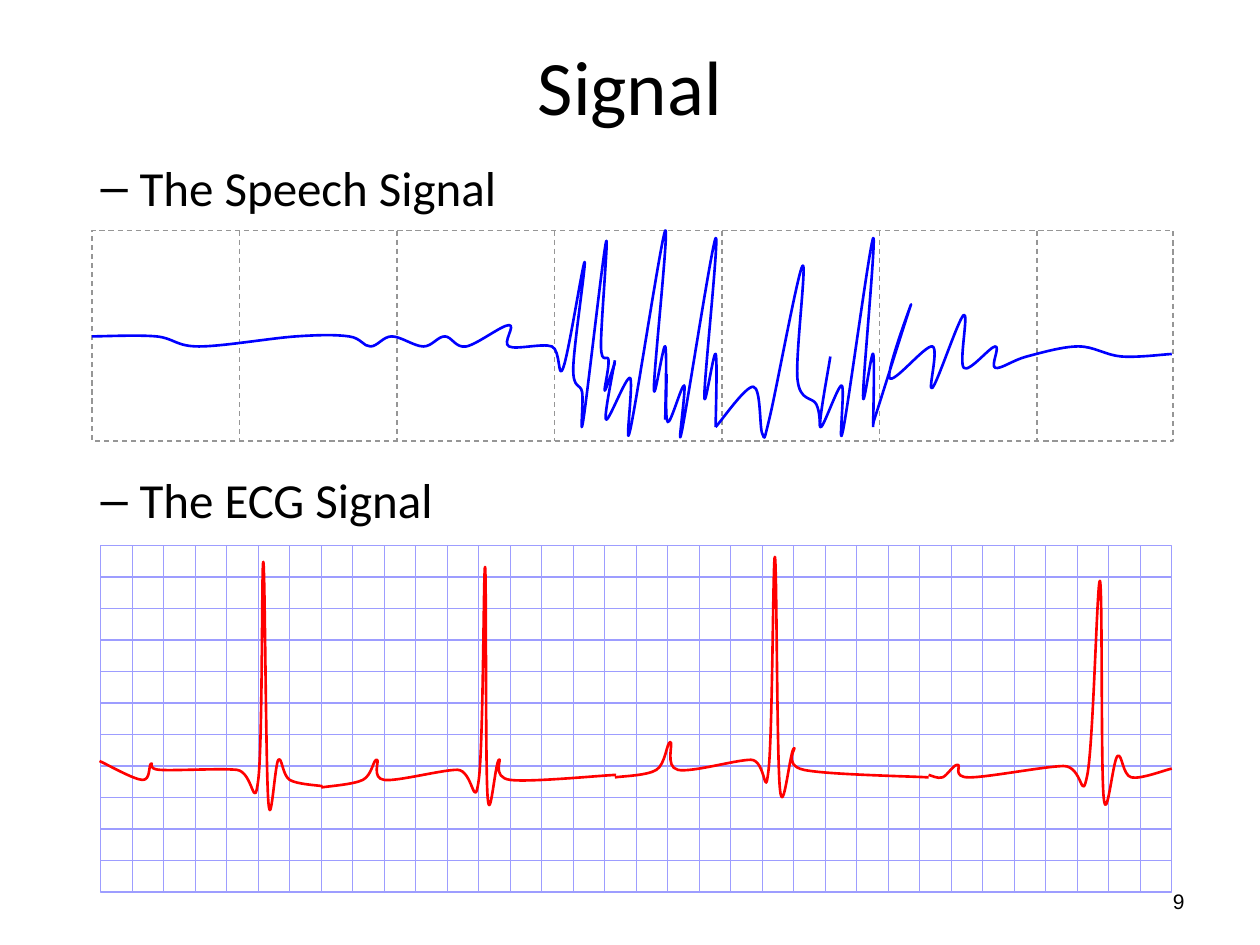
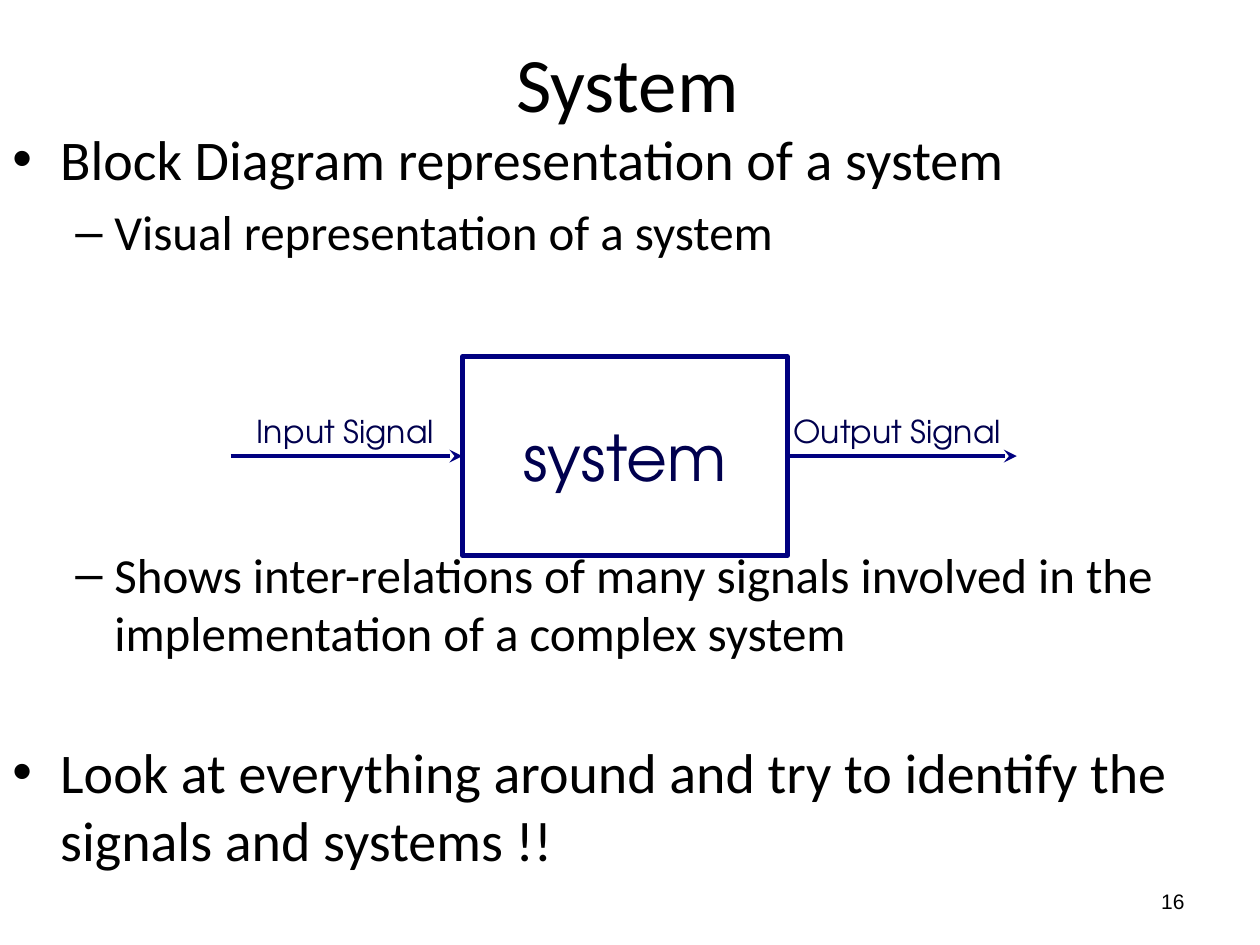
"""Build two slides introducing signals and systems."""
from dataclasses import dataclass
from itertools import chain
from typing import Optional

import pptx
import pptx.dml.color
import pptx.enum.dml
import pptx.enum.shapes
import pptx.enum.text
import pptx.oxml
import pptx.oxml.ns
import pptx.util
from lxml import etree

PX = 9144
BLACK, NAVY, INK = "000000", "000080", "00004E"
GRAY, LILAC, BLUE, RED = "969696", "9D9DFF", "0000FF", "FF0000"
BODY_FONT, NUMBER_FONT, DIAGRAM_FONT = "Calibri", "Arial", "TeX Gyre Adventor"
ALIGN = pptx.enum.text.PP_ALIGN
ANCHOR = pptx.enum.text.MSO_ANCHOR
DASH = pptx.enum.dml.MSO_LINE.DASH
qn = pptx.oxml.ns.qn


@dataclass(frozen=True)
class Box:
    left: int
    top: int
    width: int
    height: int

    @property
    def right(self) -> int:
        return self.left + self.width

    @property
    def bottom(self) -> int:
        return self.top + self.height

    def emu(self) -> list:
        return [px(v) for v in (self.left, self.top, self.width, self.height)]


@dataclass(frozen=True)
class Stroke:
    color: str
    points: float
    dash: Optional[int] = None
    arrow: bool = False


@dataclass(frozen=True)
class Level:
    depth: int
    bullet: str
    size: int
    margin: int
    hanging: int


@dataclass(frozen=True)
class Item:
    text: str
    level: Level
    space_before: float = 0


@dataclass(frozen=True)
class Grid:
    frame: Box
    columns: tuple
    rows: tuple
    stroke: Stroke


POINT = Level(0, "•", 32, 38, 38)
SUBPOINT = Level(1, "–", 28, 81, 31)

SPEECH_GRID = Grid(Box(73, 183, 858, 167),
                   (*range(190, 441, 125), *range(573, 824, 125)), (),
                   Stroke(GRAY, 0.75, DASH))
ECG_GRID = Grid(Box(80, 433, 850, 275), tuple(range(105, 906, 25)),
                tuple(range(458, 684, 25)), Stroke(LILAC, 0.75))

SPEECH_WAVES = (
    ((73, 267), (124, 267), (158, 275), (235, 267), (277, 267), (294, 275),
     (311, 267), (336, 275), (353, 267), (370, 275), (404, 258), (404, 275),
     (438, 275), (447, 292), (464, 208), (455, 292), (462, 311), (463, 333),
     (481, 192), (477, 275), (483, 286), (480, 310), (488, 288)),
    ((488, 286), (481, 333), (500, 300), (500, 342), (528, 183), (519, 308),
     (528, 275), (528, 333)),
    ((529, 297), (530, 335), (543, 306), (541, 343), (568, 189), (559, 314),
     (568, 281), (568, 339)),
    ((568, 339), (598, 307), (605, 344), (611, 331), (637, 211), (633, 301),
     (648, 321), (651, 339)),
    ((659, 283), (651, 339), (668, 306), (669, 342), (693, 189), (685, 314),
     (693, 281), (693, 339)),
    ((693, 336), (723, 242), (706, 300), (740, 275), (740, 308), (765, 250),
     (765, 292), (790, 275), (790, 292), (815, 283), (856, 275), (890, 283),
     (930, 281)),
)
ECG_BEATS = (
    ((79, 604), (113, 619), (120, 606), (127, 611), (188, 611), (205, 619),
     (209, 446), (213, 636), (221, 603), (230, 619), (256, 624)),
    ((255, 625), (288, 619), (299, 603), (305, 619), (363, 611), (380, 619),
     (385, 450), (387, 632), (396, 603), (405, 619), (489, 615)),
    ((488, 617), (521, 611), (532, 589), (538, 611), (596, 603), (610, 611),
     (615, 442), (619, 626), (630, 594), (638, 611), (737, 617)),
    ((737, 615), (748, 617), (760, 607), (769, 617), (844, 608), (863, 615),
     (873, 461), (876, 633), (887, 600), (898, 617), (930, 610)),
)


def px(length: float) -> int:
    return round(length * PX)


def rgb(color: str):
    return pptx.dml.color.RGBColor.from_string(color)


def style_font(paragraph, size: int, family: str, color: str) -> None:
    paragraph.font.size = pptx.util.Pt(size)
    paragraph.font.name = family
    paragraph.font.color.rgb = rgb(color)


def style_line(shape, stroke: Stroke) -> None:
    shape.line.color.rgb = rgb(stroke.color)
    shape.line.width = pptx.util.Pt(stroke.points)
    if stroke.dash is not None:
        shape.line.dash_style = stroke.dash


def add_label(slide, box: Box, text: str, size: int, family: str, color: str = BLACK,
              align=ALIGN.LEFT, anchor=ANCHOR.TOP) -> None:
    frame = slide.shapes.add_textbox(*box.emu()).text_frame
    frame.word_wrap = True
    frame.vertical_anchor = anchor
    paragraph = frame.paragraphs[0]
    paragraph.text = text
    paragraph.alignment = align
    style_font(paragraph, size, family, color)


def add_outline(slide, box: Box, stroke: Stroke):
    outline = slide.shapes.add_shape(
        pptx.enum.shapes.MSO_SHAPE.RECTANGLE, *box.emu())
    outline.shadow.inherit = False
    outline.fill.background()
    style_line(outline, stroke)
    return outline


def add_line(slide, start: tuple, end: tuple, stroke: Stroke):
    line = slide.shapes.add_connector(
        pptx.enum.shapes.MSO_CONNECTOR.STRAIGHT, *map(px, start + end))
    style_line(line, stroke)
    if stroke.arrow:
        etree.SubElement(line.line._get_or_add_ln(), qn("a:tailEnd"), type="stealth")
    etree.SubElement(line.element.spPr, qn("a:effectLst"))
    return line


def add_grid(slide, grid: Grid) -> None:
    frame = grid.frame
    add_outline(slide, frame, grid.stroke)
    for x in grid.columns:
        add_line(slide, (x, frame.top), (x, frame.bottom), grid.stroke)
    for y in grid.rows:
        add_line(slide, (frame.left, y), (frame.right, y), grid.stroke)


def shifted(anchor: tuple, before: tuple, after: tuple, sign: int) -> tuple:
    return tuple(a + sign * (n - b) / 6 for a, b, n in zip(anchor, before, after))


def add_curve(slide, anchors: tuple, stroke: Stroke) -> None:
    padded = (anchors[0], *anchors, anchors[-1])
    segments = [(shifted(start, before, end, 1), shifted(end, start, after, -1), end)
                for before, start, end, after
                in zip(padded, padded[1:], padded[2:], padded[3:])]
    builder = slide.shapes.build_freeform(*map(px, anchors[0]))
    builder.add_line_segments([tuple(map(px, p)) for p in chain(*segments)], close=False)
    curve = builder.convert_to_shape()
    steps = curve.element.findall(".//" + qn("a:lnTo"))
    for first, second, third in zip(steps[::3], steps[1::3], steps[2::3]):
        first.tag = qn("a:cubicBezTo")
        for step in (second, third):
            first.append(step[0])
            step.getparent().remove(step)
    curve.shadow.inherit = False
    curve.fill.background()
    style_line(curve, stroke)


def add_items(slide, box: Box, items: tuple) -> None:
    frame = slide.shapes.add_textbox(*box.emu()).text_frame
    frame.word_wrap = True
    for index, item in enumerate(items):
        paragraph = frame.add_paragraph() if index else frame.paragraphs[0]
        level = item.level
        paragraph.text = item.text
        paragraph.level = level.depth
        paragraph.space_before = pptx.util.Pt(item.space_before)
        style_font(paragraph, level.size, BODY_FONT, BLACK)
        properties = paragraph._p.get_or_add_pPr()
        properties.set("marL", str(px(level.margin)))
        properties.set("indent", str(-px(level.hanging)))
        bullet_font = etree.Element(qn("a:buFont"), typeface="Arial")
        bullet = etree.Element(qn("a:buChar"), char=level.bullet)
        spacing = properties.find(qn("a:spcBef"))
        spacing.addnext(bullet_font)
        bullet_font.addnext(bullet)


def add_slide(deck, title: str, title_box: Box, number: int):
    slide = deck.slides.add_slide(deck.slide_layouts[6])
    add_label(slide, Box(717, 695, 233, 40), str(number), 12, NUMBER_FONT,
              align=ALIGN.RIGHT, anchor=ANCHOR.MIDDLE)
    add_label(slide, title_box, title, 44, BODY_FONT,
              align=ALIGN.CENTER, anchor=ANCHOR.MIDDLE)
    return slide


def build_signal(deck) -> None:
    slide = add_slide(deck, "Signal", Box(50, 5, 900, 125), 9)
    add_items(slide, Box(20, 120, 900, 495), (
        Item("The Speech Signal", SUBPOINT),
        Item("The ECG Signal", SUBPOINT, 145)))
    for grid, curves, color in ((SPEECH_GRID, SPEECH_WAVES, BLUE),
                                (ECG_GRID, ECG_BEATS, RED)):
        add_grid(slide, grid)
        for anchors in curves:
            add_curve(slide, anchors, Stroke(color, 1.5))


def build_system(deck) -> None:
    slide = add_slide(deck, "System", Box(48, 2, 900, 125), 16)
    add_items(slide, Box(0, 94, 1000, 641), (
        Item("Block Diagram representation of a system", POINT),
        Item("Visual representation of a system", SUBPOINT, 5.6),
        Item("Shows inter-relations of many signals involved in the "
             "implementation of a complex system", SUBPOINT, 162),
        Item("Look at everything around and try to identify the "
             "signals and systems !!", POINT, 43.5)))
    block = Box(367, 283, 258, 158)
    system = add_outline(slide, block, Stroke(NAVY, 2.5))
    system.text_frame.word_wrap = False
    system.text_frame.vertical_anchor = ANCHOR.MIDDLE
    name = system.text_frame.paragraphs[0]
    name.text = "system"
    name.alignment = ALIGN.CENTER
    style_font(name, 36, DIAGRAM_FONT, INK)
    arrow = Stroke(NAVY, 2.5, arrow=True)
    middle = block.top + block.height // 2
    signal_in = add_line(slide, (183, middle), (block.left, middle), arrow)
    signal_in.end_connect(system, 1)
    signal_out = add_line(slide, (block.right, middle), (807, middle), arrow)
    signal_out.begin_connect(system, 3)
    for label, left, width in (("Input Signal", 194, 239), ("Output Signal", 620, 267)):
        add_label(slide, Box(left, 322, width, 40), label, 18, DIAGRAM_FONT, INK)


def main() -> None:
    deck = pptx.Presentation()
    deck.slide_width, deck.slide_height = px(1000), px(750)
    build_signal(deck)
    build_system(deck)
    deck.save("out.pptx")


if __name__ == "__main__":
    main()
